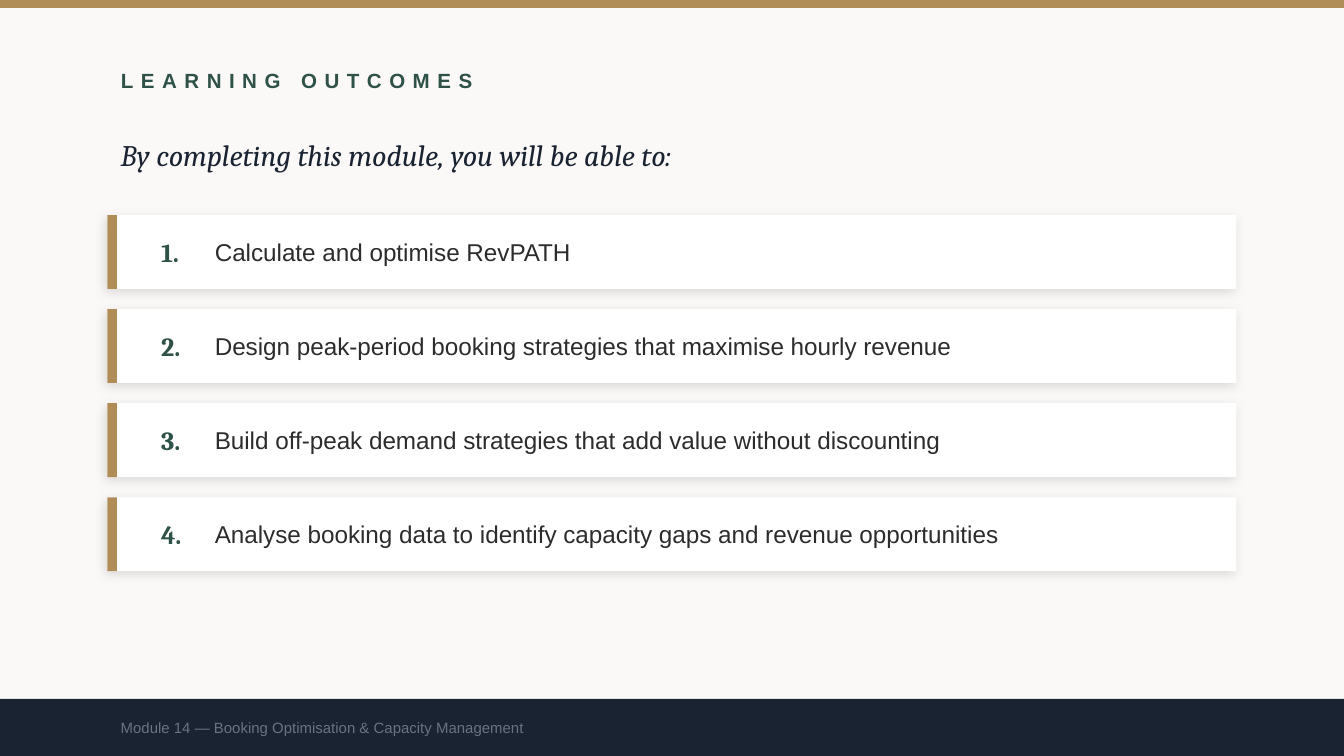
"""Build the learning outcomes slide of the booking module."""
from lxml.etree import SubElement
from pptx import Presentation
from pptx.dml.color import RGBColor
from pptx.enum.shapes import MSO_SHAPE as Shape
from pptx.enum.text import MSO_ANCHOR as Anchor, MSO_AUTO_SIZE as AutoSize, PP_ALIGN as Align
from pptx.oxml.ns import qn
from pptx.util import Pt

COLORS = {
    "page": "FAF9F7",
    "gold": "B08D57",
    "green": "2E5148",
    "navy": "1A2332",
    "card": "FFFFFF",
    "body": "2C2C2C",
    "muted": "6B7280",
    "shadow": "000000",
}
OUTCOMES = [
    "Calculate and optimise RevPATH",
    "Design peak-period booking strategies that maximise hourly revenue",
    "Build off-peak demand strategies that add value without discounting",
    "Analyse booking data to identify capacity gaps and revenue opportunities",
]
WIDTH, HEIGHT = 720, 405
MARGIN = 57.6
TEXT_WIDTH = 576
CARD_TOP, CARD_HEIGHT, CARD_PITCH = 115.2, 39.6, 50.4
FOOTER_TOP = 374.4


def rgb(name):
    return RGBColor.from_string(COLORS[name])


def add_bar(slide, left, top, width, height, color):
    bar = slide.shapes.add_shape(Shape.RECTANGLE, Pt(left), Pt(top), Pt(width), Pt(height))
    bar.fill.solid()
    bar.fill.fore_color.rgb = rgb(color)
    bar.line.fill.background()
    bar.shadow.inherit = False
    return bar


def add_soft_shadow(card):
    effects = card._element.spPr.find(qn("a:effectLst"))
    shadow = SubElement(effects, qn("a:outerShdw"), blurRad=str(Pt(6)), dist=str(Pt(2)),
                        dir=str(135 * 60000), algn="bl", rotWithShape="0")
    tint = SubElement(shadow, qn("a:srgbClr"), val=COLORS["shadow"])
    SubElement(tint, qn("a:alpha"), val="12000")


def write_line(frame, text, size, font, color, bold=False, italic=False):
    frame.word_wrap = True
    frame.auto_size = AutoSize.NONE
    frame.vertical_anchor = Anchor.MIDDLE
    line = frame.paragraphs[0]
    line.alignment = Align.LEFT
    run = line.add_run()
    run.text = text
    run.font.size = Pt(size)
    run.font.name = font
    run.font.color.rgb = rgb(color)
    run.font.bold = bold
    run.font.italic = italic
    return run


def add_label(slide, left, top, width, height, *words, **style):
    label = slide.shapes.add_textbox(Pt(left), Pt(top), Pt(width), Pt(height))
    write_line(label.text_frame, *words, **style)


def set_heading(slide, text):
    heading = slide.shapes.title
    heading.left, heading.top = Pt(MARGIN), Pt(28.8)
    heading.width, heading.height = Pt(TEXT_WIDTH), Pt(28.8)
    run = write_line(heading.text_frame, text, 11, "Arial", "green", bold=True)
    run.font._element.set("spc", "400")


def add_outcome(slide, number, outcome):
    top = CARD_TOP + (number - 1) * CARD_PITCH
    add_soft_shadow(add_bar(slide, MARGIN, top, 604.8, CARD_HEIGHT, "card"))
    add_bar(slide, MARGIN, top, 5.04, CARD_HEIGHT, "gold")
    add_label(slide, 79.2, top, 28.8, CARD_HEIGHT, f"{number}.", 14, "Cambria", "green", bold=True)
    add_label(slide, 108, top, 532.8, CARD_HEIGHT, outcome, 13, "Arial", "body")


def main():
    deck = Presentation()
    deck.slide_width, deck.slide_height = Pt(WIDTH), Pt(HEIGHT)
    slide = deck.slides.add_slide(deck.slide_layouts[5])
    slide.background.fill.solid()
    slide.background.fill.fore_color.rgb = rgb("page")

    add_bar(slide, 0, 0, WIDTH, 4.32, "gold")
    set_heading(slide, "LEARNING OUTCOMES")
    add_label(slide, MARGIN, 64.8, TEXT_WIDTH, 36,
              "By completing this module, you will be able to:", 16, "Cambria", "navy", italic=True)
    for number, outcome in enumerate(OUTCOMES, start=1):
        add_outcome(slide, number, outcome)

    footer_height = HEIGHT - FOOTER_TOP
    add_bar(slide, 0, FOOTER_TOP, WIDTH, footer_height, "navy")
    add_label(slide, MARGIN, FOOTER_TOP, TEXT_WIDTH, footer_height,
              "Module 14 — Booking Optimisation & Capacity Management", 8, "Arial", "muted")
    deck.save("out.pptx")


if __name__ == "__main__":
    main()
